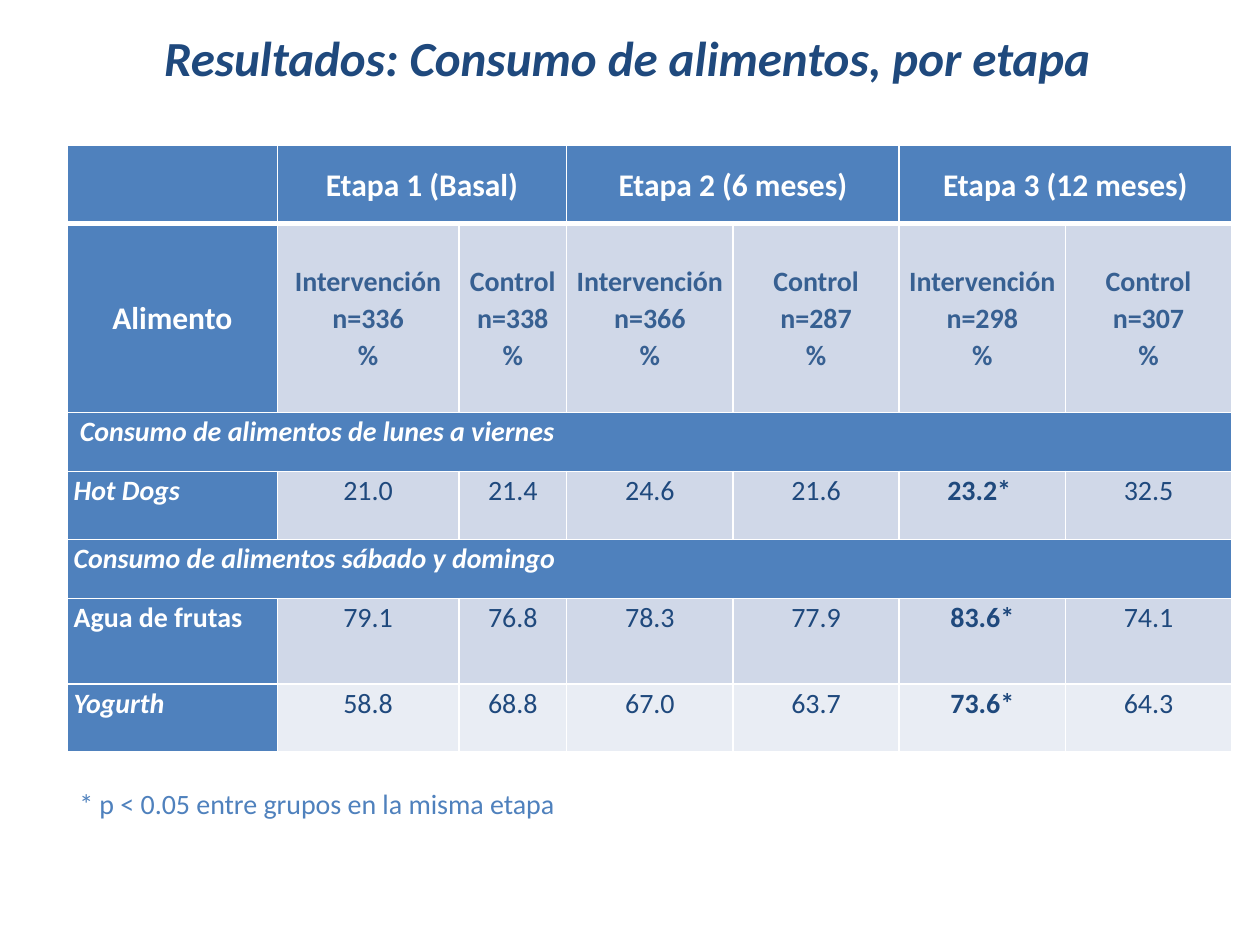
from lxml.etree import SubElement
from pptx import Presentation
from pptx.dml.color import RGBColor
from pptx.enum.text import MSO_ANCHOR, PP_ALIGN
from pptx.oxml.ns import qn
from pptx.util import Pt

NAVY, BLUE, STEEL, WHITE = "1F497D", "4F81BD", "376092", "FFFFFF"
BAND, LIGHT = "D0D8E8", "E9EDF4"


def color(value):
    return RGBColor.from_string(value)


class Deck:
    font = "Calibri"

    def __init__(self, width, height):
        self.prs = Presentation()
        self.prs.slide_width, self.prs.slide_height = Pt(width), Pt(height)
        self.slide = self.prs.slides.add_slide(self.prs.slide_layouts[6])

    def paragraphs(self, tf, text, size, fill, bold=False, italic=False,
                   align=PP_ALIGN.LEFT, spacing=None, after=None):
        for i, line in enumerate(text.split("\n")):
            p = tf.add_paragraph() if i else tf.paragraphs[0]
            p.alignment, p.line_spacing = align, spacing
            if after is not None:
                p.space_after = Pt(after)
            f = p.font
            f.name, f.size, f.bold, f.italic = self.font, Pt(size), bold, italic
            f.color.rgb = color(fill)
            p.add_run().text = line

    def text(self, x, y, w, h, text, size, fill, wrap=True,
             anchor=MSO_ANCHOR.TOP, **style):
        tf = self.slide.shapes.add_textbox(Pt(x), Pt(y), Pt(w), Pt(h)).text_frame
        tf.word_wrap, tf.vertical_anchor = wrap, anchor
        self.paragraphs(tf, text, size, fill, **style)

    def table(self, x, y, widths, heights):
        sp = self.slide.shapes.add_table(len(heights), len(widths), Pt(x), Pt(y),
                                         Pt(sum(widths)), Pt(sum(heights)))
        tbl = sp.table
        for col, w in zip(tbl.columns, widths):
            col.width = Pt(w)
        for row, h in zip(tbl.rows, heights):
            row.height = Pt(h)
        return tbl

    def cell(self, cell, fill, top=1, bottom=1):
        tcPr = cell._tc.get_or_add_tcPr()
        for side, width in (("L", 1), ("R", 1), ("T", top), ("B", bottom)):
            ln = SubElement(tcPr, qn(f"a:ln{side}"), w=str(Pt(width)))
            SubElement(SubElement(ln, qn("a:solidFill")), qn("a:srgbClr"), val=WHITE)
        cell.fill.solid()
        cell.fill.fore_color.rgb = color(fill)

    def cell_text(self, cell, text, size, fill, anchor=MSO_ANCHOR.TOP, **style):
        cell.margin_left = cell.margin_right = Pt(3.6)
        cell.margin_top = cell.margin_bottom = 0
        cell.vertical_anchor = anchor
        self.paragraphs(cell.text_frame, text, size, fill, spacing=1.07, **style)


def main():
    s = Deck(720, 540)
    middle = {"anchor": MSO_ANCHOR.MIDDLE, "align": PP_ALIGN.CENTER, "bold": True}

    # Title and footnote
    s.text(37.5, 16.5, 648, 31.7, "Resultados: Consumo de alimentos, por etapa ",
           28, NAVY, italic=True, **middle)
    s.text(38.2, 445.7, 289.4, 26.6, "* p < 0.05 entre grupos en la misma etapa",
           16, BLUE, wrap=False)

    # Table grid: blue header row, label column and section rows
    tbl = s.table(38.5, 83, [120, 103.7, 61.7] + [95] * 4,
                  [44.6, 108, 33.8, 38.9, 33.8, 48.9, 38.9])
    sections = {2: " Consumo de alimentos de lunes a viernes",
                4: "Consumo de alimentos sábado y domingo"}
    for r in range(7):
        for c in range(7):
            blue = r == 0 or c == 0 or r in sections
            fill = BLUE if blue else LIGHT if r == 6 else BAND
            s.cell(tbl.cell(r, c), fill, top=3 if r == 1 else 1,
                   bottom=3 if r == 0 else 1)

    # Stage headers
    stages = ["Etapa 1 (Basal)", "Etapa 2 (6 meses)", "Etapa 3 (12 meses)"]
    for i, stage in enumerate(stages):
        cell = tbl.cell(0, 2 * i + 1)
        cell.merge(tbl.cell(0, 2 * i + 2))
        s.cell_text(cell, stage, 18, WHITE, **middle)

    # Group headers
    s.cell_text(tbl.cell(1, 0), "Alimento", 18, WHITE, **middle)
    for c, n in enumerate([336, 338, 366, 287, 298, 307], 1):
        group = "Intervención" if c % 2 else "Control"
        s.cell_text(tbl.cell(1, c), f"{group}\nn={n}\n%", 16, STEEL, **middle)

    # Section rows
    for r, title in sections.items():
        tbl.cell(r, 0).merge(tbl.cell(r, 6))
        s.cell_text(tbl.cell(r, 0), title, 16, WHITE, bold=True, italic=True)

    # Food rows: row, label, italic label, space after values, values
    foods = [
        (3, "Hot Dogs", True, None, ["21.0", "21.4", "24.6", "21.6", "23.2* ", "32.5"]),
        (5, "Agua de frutas", False, 8, ["79.1", "76.8", "78.3", "77.9", "83.6*", "74.1"]),
        (6, "Yogurth", True, 8, ["58.8", "68.8", "67.0", "63.7", "73.6*", "64.3"]),
    ]
    for r, label, italic, after, values in foods:
        s.cell_text(tbl.cell(r, 0), label, 16, WHITE, bold=True, italic=italic)
        for c, value in enumerate(values, 1):
            s.cell_text(tbl.cell(r, c), value, 16, NAVY, bold="*" in value,
                        align=PP_ALIGN.CENTER, after=after)

    s.prs.save("out.pptx")


if __name__ == "__main__":
    main()
